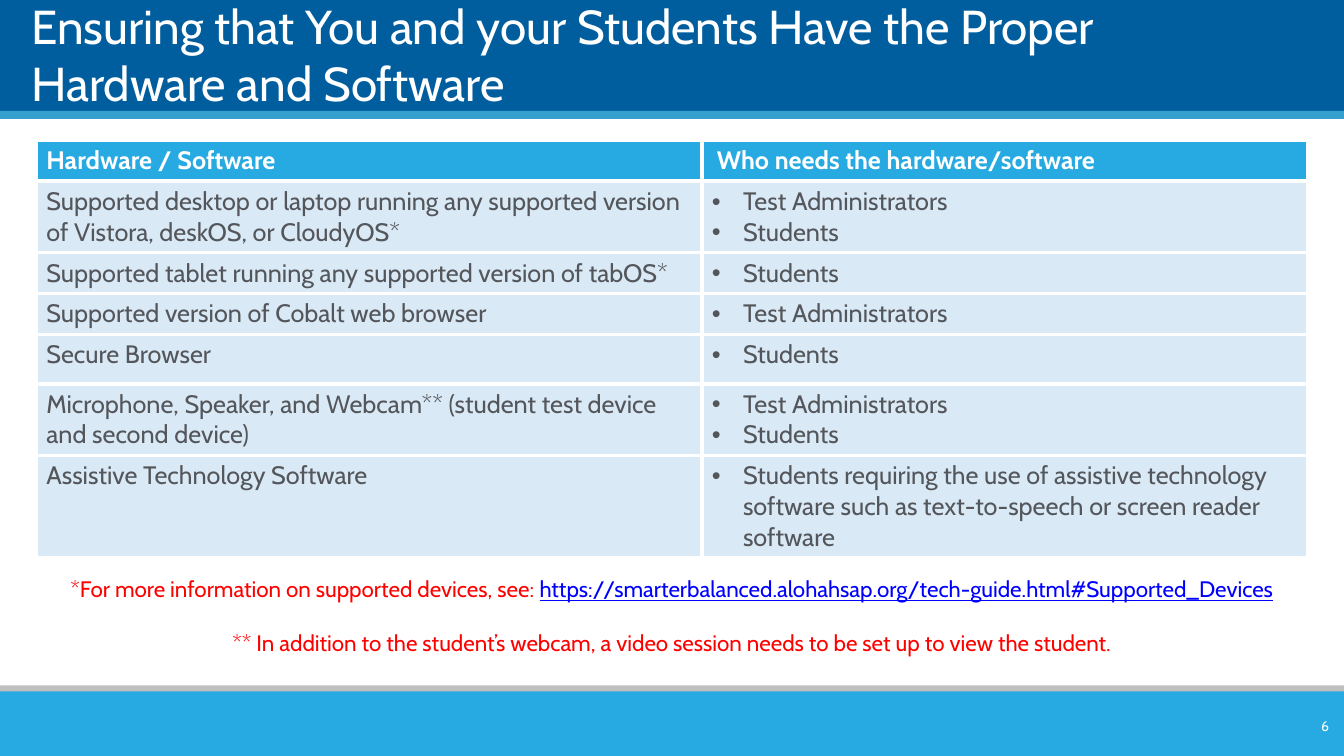
from dataclasses import dataclass

from lxml.etree import SubElement
from pptx import Presentation
from pptx.dml.color import RGBColor
from pptx.enum.shapes import MSO_SHAPE
from pptx.enum.text import MSO_ANCHOR, MSO_AUTO_SIZE, PP_ALIGN
from pptx.oxml.ns import qn
from pptx.slide import Slide
from pptx.table import _Cell
from pptx.util import Emu, Pt

EMU_PER_PIXEL = 9144


def px(length: int) -> Emu:
    return Emu(length * EMU_PER_PIXEL)


@dataclass(frozen=True)
class Theme:
    font: str = "Cabin"
    white: str = "FFFFFF"
    navy: str = "005E9E"
    steel: str = "35A0CE"
    gray: str = "BFBFBF"
    sky: str = "27AAE1"
    pale: str = "DAE9F6"
    ink: str = "53565A"
    red: str = "FF0000"
    link: str = "0000FF"
    title_size: int = 34
    table_size: int = 18
    note_size: int = 16
    number_size: int = 10
    border_width: int = 3


@dataclass(frozen=True)
class Bar:
    top: int
    height: int
    color: str


@dataclass(frozen=True)
class Requirement:
    item: str
    users: tuple[str, ...]
    height: int


THEME = Theme()
SLIDE_WIDTH, SLIDE_HEIGHT = 1333, 750
LEFT, CONTENT_WIDTH = 36, 1261
COLUMN_WIDTHS = (660, 601)
HEADER_HEIGHT, TABLE_HEIGHT = 35, 406
BULLET_INDENT = 31

BARS = (
    Bar(-1, 115, THEME.navy),
    Bar(110, 8, THEME.steel),
    Bar(680, 14, THEME.gray),
    Bar(686, 64, THEME.sky),
)
ADMINISTRATORS, STUDENTS = "Test Administrators", "Students"
REQUIREMENTS = (
    Requirement(
        "Supported desktop or laptop running any supported version of Vistora, deskOS, or CloudyOS*",
        (ADMINISTRATORS, STUDENTS), 55),
    Requirement("Supported tablet running any supported version of tabOS*", (STUDENTS,), 28),
    Requirement("Supported version of Cobalt web browser", (ADMINISTRATORS,), 28),
    Requirement("Secure Browser", (STUDENTS,), 49),
    Requirement(
        "Microphone, Speaker, and Webcam** (student test device and second device)",
        (ADMINISTRATORS, STUDENTS), 48),
    Requirement(
        "Assistive Technology Software",
        ("Students requiring the use of assistive technology software such as "
         "text-to-speech or screen reader software",), 55),
)


def style_font(font, size: int, color: str, bold: bool = False) -> None:
    font.name = THEME.font
    font.size = Pt(size)
    font.bold = bold
    font.color.rgb = RGBColor.from_string(color)


def add_bar(slide: Slide, bar: Bar) -> None:
    shape = slide.shapes.add_shape(
        MSO_SHAPE.RECTANGLE, 0, px(bar.top), px(SLIDE_WIDTH), px(bar.height))
    shape.shadow.inherit = False
    shape.fill.solid()
    shape.fill.fore_color.rgb = RGBColor.from_string(bar.color)
    shape.line.fill.background()


def place_title(slide: Slide, text: str) -> None:
    title = slide.shapes.title
    title.element.getparent().append(title.element)
    title.left, title.top, title.width, title.height = px(31), px(9), px(1220), px(101)
    frame = title.text_frame
    frame.text = text
    frame.auto_size = MSO_AUTO_SIZE.NONE
    frame.word_wrap = True
    frame.vertical_anchor = MSO_ANCHOR.BOTTOM
    frame.margin_left = frame.margin_right = frame.margin_top = frame.margin_bottom = 0
    paragraph = frame.paragraphs[0]
    paragraph.alignment = PP_ALIGN.LEFT
    style_font(paragraph.font, THEME.title_size, THEME.white)


def style_cell(cell: _Cell, fill: str) -> None:
    properties = cell._tc.get_or_add_tcPr()
    for side in ("a:lnL", "a:lnR", "a:lnT", "a:lnB"):
        border = SubElement(properties, qn(side), w=str(Pt(THEME.border_width)))
        SubElement(SubElement(border, qn("a:solidFill")), qn("a:srgbClr"), val=THEME.white)
    cell.fill.solid()
    cell.fill.fore_color.rgb = RGBColor.from_string(fill)


def fill_cell(cell: _Cell, lines: tuple[str, ...], header: bool = False,
              bulleted: bool = False, margin: int = 0) -> None:
    style_cell(cell, THEME.sky if header else THEME.pale)
    cell.text_frame.text = "\n".join(lines)
    for paragraph in cell.text_frame.paragraphs:
        properties = paragraph._p.get_or_add_pPr()
        properties.set("marL", str(px(margin)))
        if bulleted:
            properties.set("indent", str(-px(margin)))
            SubElement(properties, qn("a:buFont"), typeface="Arial")
            SubElement(properties, qn("a:buChar"), char="•")
        style_font(paragraph.font, THEME.table_size,
                   THEME.white if header else THEME.ink, header)


def add_requirements_table(slide: Slide) -> None:
    graphic_frame = slide.shapes.add_table(
        len(REQUIREMENTS) + 1, len(COLUMN_WIDTHS),
        px(LEFT), px(139), px(CONTENT_WIDTH), px(TABLE_HEIGHT))
    table = graphic_frame.table
    for column, width in zip(table.columns, COLUMN_WIDTHS):
        column.width = px(width)
    table.rows[0].height = px(HEADER_HEIGHT)
    fill_cell(table.cell(0, 0), ("Hardware / Software",), header=True)
    fill_cell(table.cell(0, 1), ("Who needs the hardware/software",), header=True, margin=5)
    for index, requirement in enumerate(REQUIREMENTS, start=1):
        table.rows[index].height = px(requirement.height)
        fill_cell(table.cell(index, 0), (requirement.item,))
        fill_cell(table.cell(index, 1), requirement.users, bulleted=True, margin=BULLET_INDENT)
    graphic_frame.height = px(TABLE_HEIGHT)


def add_notes(slide: Slide) -> None:
    frame = slide.shapes.add_textbox(px(LEFT), px(566), px(CONTENT_WIDTH), px(91)).text_frame
    frame.word_wrap = True
    devices = frame.paragraphs[0]
    devices.alignment = PP_ALIGN.CENTER
    introduction = devices.add_run()
    introduction.text = "*For more information on supported devices, see: "
    style_font(introduction.font, THEME.note_size, THEME.red)
    address = devices.add_run()
    address.text = "https://smarterbalanced.alohahsap.org/tech-guide.html#Supported_Devices"
    style_font(address.font, THEME.note_size, THEME.link)
    address.font.underline = True
    session = frame.add_paragraph()
    session.text = ("** In addition to the student’s webcam, a video session needs "
                    "to be set up to view the student.")
    session.alignment = PP_ALIGN.CENTER
    session.space_before = Pt(19)
    style_font(session.font, THEME.note_size, THEME.red)


def add_slide_number(slide: Slide, number: int) -> None:
    frame = slide.shapes.add_textbox(px(1251), px(705), px(77), px(30)).text_frame
    frame.word_wrap = True
    frame.vertical_anchor = MSO_ANCHOR.MIDDLE
    paragraph = frame.paragraphs[0]
    paragraph.text = str(number)
    paragraph.alignment = PP_ALIGN.RIGHT
    style_font(paragraph.font, THEME.number_size, THEME.white)


def main() -> None:
    presentation = Presentation()
    presentation.slide_width = px(SLIDE_WIDTH)
    presentation.slide_height = px(SLIDE_HEIGHT)
    slide = presentation.slides.add_slide(presentation.slide_layouts[5])
    for bar in BARS:
        add_bar(slide, bar)
    add_slide_number(slide, 6)
    place_title(slide, "Ensuring that You and your Students Have the Proper Hardware and Software")
    add_requirements_table(slide)
    add_notes(slide)
    presentation.save("out.pptx")


if __name__ == "__main__":
    main()
